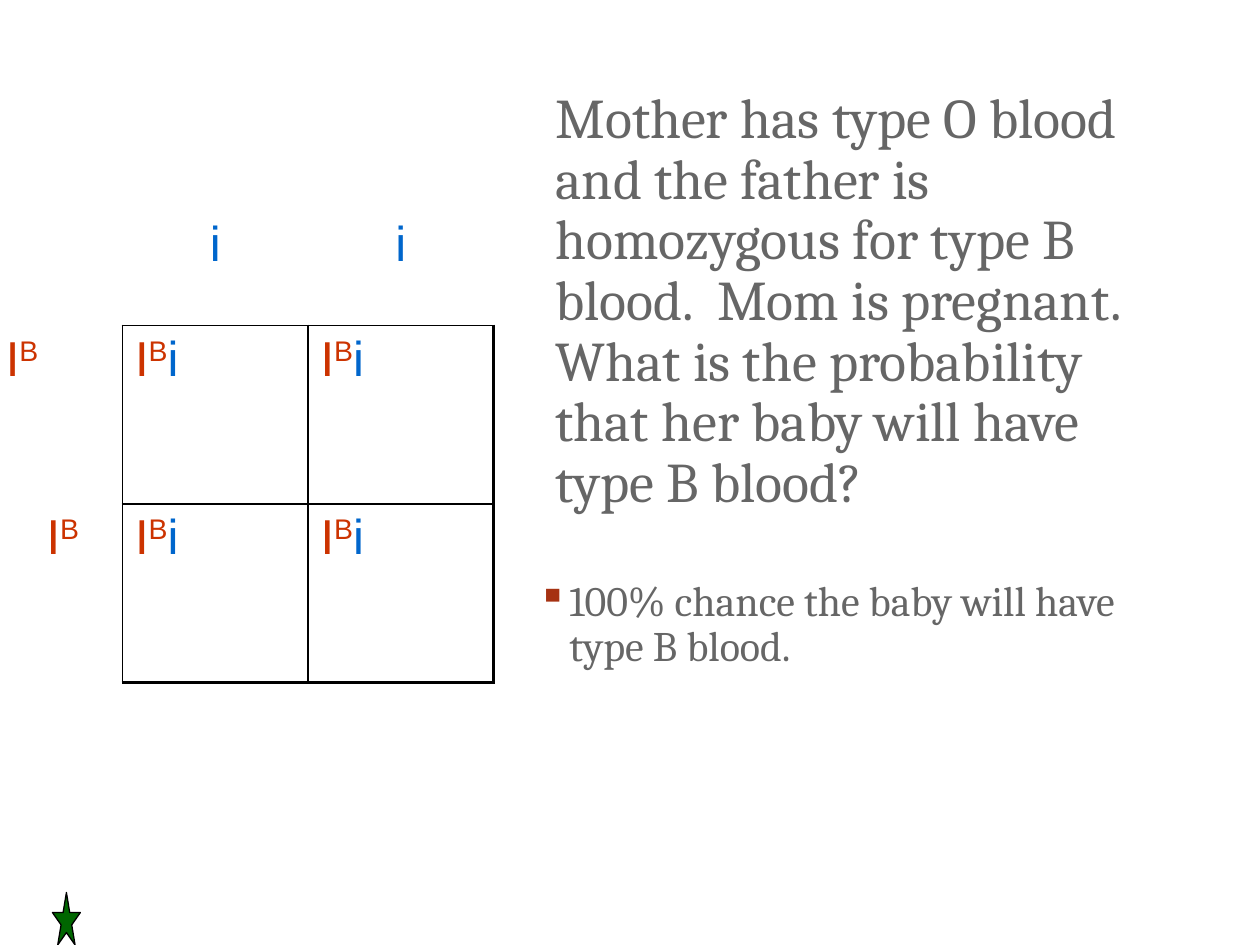
from dataclasses import dataclass

from lxml import etree
from pptx import Presentation
from pptx.dml.color import RGBColor
from pptx.enum.shapes import MSO_SHAPE
from pptx.enum.text import PP_ALIGN
from pptx.oxml.ns import qn
from pptx.util import Pt

STAR = MSO_SHAPE.STAR_5_POINT
LEFT, CENTER = PP_ALIGN.LEFT, PP_ALIGN.CENTER

RED, BLUE, GRAY = "CC3300", "0066CC", "666666"
BLACK, WHITE, GREEN, RUST = "000000", "FFFFFF", "006600", "A63212"

GRID_SIZE = 3
COLUMN_WIDTH, ROW_HEIGHT = 106, 102
THIN, THICK = 1, 2.25


@dataclass(frozen=True)
class Allele:
    letter: str
    color: str
    superscript: str = ""


@dataclass(frozen=True)
class Heading:
    allele: Allele
    alignment: PP_ALIGN
    margin_left: float
    margin_top: float


@dataclass(frozen=True)
class BodyParagraph:
    text: str
    size: float
    margin_left: float
    indent: float
    space_before: float
    bullet: str = ""


TYPE_B = Allele("I", RED, "B")
TYPE_O = Allele("i", BLUE)
MOTHER = [Heading(TYPE_O, CENTER, 7.2, 40.4)] * 2
FATHER = [Heading(TYPE_B, LEFT, 39.4, 3.6), Heading(TYPE_B, LEFT, 62.6, 3.6)]

BODY = [
    BodyParagraph(
        "Mother has type O blood and the father is homozygous for type B blood.  "
        "Mom is pregnant.  What is the probability that her baby will have "
        "type B blood?", 32, 36, 0, 0),
    BodyParagraph("100% chance the baby will have type B blood.",
                  24, 44, -18, 37.5, "▪"),
]


def rgb(color: str) -> RGBColor:
    return RGBColor.from_string(color)


def add_run(paragraph, text: str, color: str, raised: bool = False) -> None:
    run = paragraph.add_run()
    run.text = text
    run.font.name = "Arial"
    run.font.size = Pt(28)
    run.font.color.rgb = rgb(color)
    if raised:
        run.font._element.set("baseline", "30000")


def write_alleles(cell, alleles: list[Allele]) -> None:
    paragraph = cell.text_frame.paragraphs[0]
    for allele in alleles:
        add_run(paragraph, allele.letter, allele.color)
        if allele.superscript:
            add_run(paragraph, allele.superscript, allele.color, raised=True)


def write_heading(cell, heading: Heading) -> None:
    write_alleles(cell, [heading.allele])
    cell.text_frame.paragraphs[0].alignment = heading.alignment
    cell.margin_left = Pt(heading.margin_left)
    cell.margin_top = Pt(heading.margin_top)


def set_border(cell, side: str, color: str, width: float) -> None:
    line = etree.SubElement(cell._tc.get_or_add_tcPr(), qn(f"a:ln{side}"),
                            w=str(Pt(width)))
    fill = etree.SubElement(line, qn("a:solidFill"))
    etree.SubElement(fill, qn("a:srgbClr"), val=color)


def style_cell(cell, row: int, column: int) -> None:
    """Black lines enclose the offspring cells; the outer edge is thicker."""
    last = GRID_SIZE - 1
    lines = {
        "L": (row > 0 and column > 0, False),
        "R": (row > 0, column == last),
        "T": (row > 0 and column > 0, False),
        "B": (column > 0, row == last),
    }
    for side, (visible, outer) in lines.items():
        set_border(cell, side, BLACK if visible else WHITE,
                   THICK if visible and outer else THIN)
    cell.fill.background()


def add_punnett_square(slide) -> None:
    table = slide.shapes.add_table(
        GRID_SIZE, GRID_SIZE, Pt(-36), Pt(84),
        Pt(GRID_SIZE * COLUMN_WIDTH), Pt(GRID_SIZE * ROW_HEIGHT)).table
    table.first_row = False
    table.horz_banding = False
    for row in range(GRID_SIZE):
        for column in range(GRID_SIZE):
            cell = table.cell(row, column)
            style_cell(cell, row, column)
            if row and column:
                write_alleles(cell, [FATHER[row - 1].allele,
                                     MOTHER[column - 1].allele])
            elif row:
                write_heading(cell, FATHER[row - 1])
            elif column:
                write_heading(cell, MOTHER[column - 1])


def add_bullet(properties, character: str) -> None:
    color = etree.SubElement(properties, qn("a:buClr"))
    etree.SubElement(color, qn("a:srgbClr"), val=RUST)
    etree.SubElement(properties, qn("a:buSzPct"), val="95000")
    etree.SubElement(properties, qn("a:buChar"), char=character)


def add_body(slide, paragraphs: list[BodyParagraph]) -> None:
    text_box = slide.shapes.add_textbox(Pt(274.3), Pt(48.2), Pt(409.7), Pt(462.2))
    text_frame = text_box.text_frame
    text_frame.word_wrap = True
    for index, item in enumerate(paragraphs):
        paragraph = text_frame.add_paragraph() if index else text_frame.paragraphs[0]
        paragraph.text = item.text
        paragraph.line_spacing = 0.9
        if item.space_before:
            paragraph.space_before = Pt(item.space_before)
        properties = paragraph._p.get_or_add_pPr()
        properties.set("marL", str(Pt(item.margin_left)))
        properties.set("indent", str(Pt(item.indent)))
        if item.bullet:
            add_bullet(properties, item.bullet)
        font = paragraph.runs[0].font
        font.name = "Cambria"
        font.size = Pt(item.size)
        font.color.rgb = rgb(GRAY)


def add_star(slide) -> None:
    star = slide.shapes.add_shape(STAR, Pt(30), Pt(510), Pt(16), Pt(30))
    star.shadow.inherit = False
    star.fill.solid()
    star.fill.fore_color.rgb = rgb(GREEN)
    star.line.color.rgb = rgb(BLACK)
    star.line.width = Pt(0.75)


def main() -> None:
    presentation = Presentation()
    presentation.slide_width, presentation.slide_height = Pt(720), Pt(540)
    slide = presentation.slides.add_slide(presentation.slide_layouts[6])

    # Cross of the parents' alleles
    add_punnett_square(slide)

    # Question and answer
    add_body(slide, BODY)

    # Corner marker
    add_star(slide)

    presentation.save("out.pptx")


if __name__ == "__main__":
    main()
